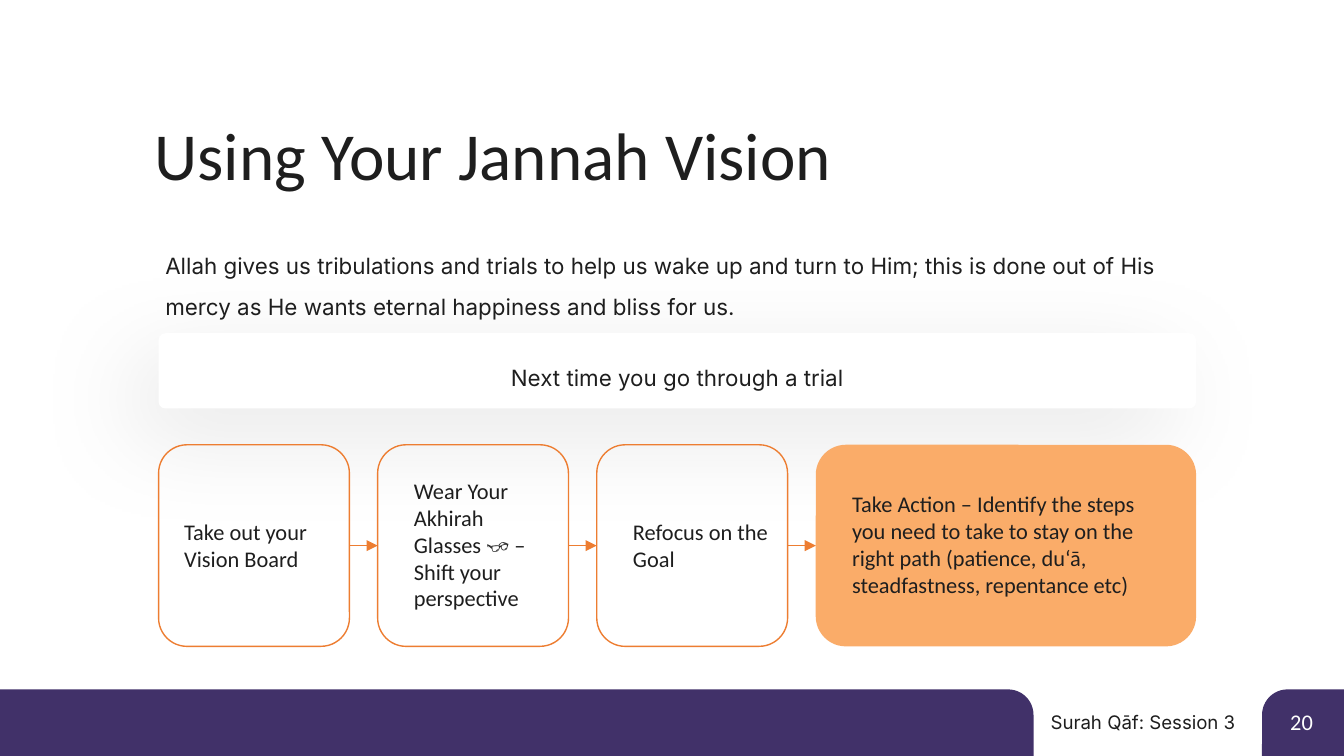
import dataclasses

import lxml.etree
import pptx
import pptx.dml.color
import pptx.enum.shapes
import pptx.enum.text
import pptx.oxml.ns
import pptx.util

Inches = pptx.util.Inches
Pt = pptx.util.Pt
RGBColor = pptx.dml.color.RGBColor
Shape = pptx.enum.shapes.MSO_SHAPE
Align = pptx.enum.text.PP_ALIGN
Anchor = pptx.enum.text.MSO_ANCHOR
AutoSize = pptx.enum.text.MSO_AUTO_SIZE
qn = pptx.oxml.ns.qn


@dataclasses.dataclass(frozen=True)
class Theme:
    ink: RGBColor = RGBColor.from_string("1E1E1E")
    white: RGBColor = RGBColor.from_string("FFFFFF")
    purple: RGBColor = RGBColor.from_string("413169")
    orange: RGBColor = RGBColor.from_string("ED7D31")
    peach: RGBColor = RGBColor.from_string("FAAC69")
    shadow: str = "000000"
    main_font: str = "Calibri"
    text_font: str = "Inter"
    title_size: int = 36
    body_size: int = 12
    footer_size: int = 10
    line_width: float = 0.75


theme = Theme()


def add_panel(kind, left, top, width, height, corner, fill=None, line=None):
    panel = page.shapes.add_shape(
        kind, Inches(left), Inches(top), Inches(width), Inches(height))
    panel.shadow.inherit = False
    panel.adjustments[0] = corner
    if fill is None:
        panel.fill.background()
    else:
        panel.fill.solid()
        panel.fill.fore_color.rgb = fill
    if line is None:
        panel.line.fill.background()
    else:
        panel.line.color.rgb = line
        panel.line.width = Pt(theme.line_width)
    return panel


def write(box, text, font=theme.main_font, size=theme.body_size, color=theme.ink,
          align=Align.LEFT, spacing=1.0, anchor=Anchor.TOP):
    frame = box.text_frame
    frame.word_wrap = True
    frame.auto_size = AutoSize.NONE
    frame.vertical_anchor = anchor
    frame.margin_left = frame.margin_right = Inches(0.05)
    frame.margin_top = frame.margin_bottom = Inches(0.02)
    para = frame.paragraphs[0]
    para.alignment = align
    para.line_spacing = spacing
    span = para.add_run()
    span.text = text
    span.font.name = font
    span.font.size = Pt(size)
    span.font.color.rgb = color


# Widescreen page, 16 by 9
deck = pptx.Presentation()
deck.slide_width = Inches(10)
deck.slide_height = Inches(10) * 9 // 16
page = deck.slides.add_slide(deck.slide_layouts[5])
page.background.fill.solid()
page.background.fill.fore_color.rgb = theme.white

# Footer: page number tab, session name and long bar
number_tab = add_panel(Shape.ROUND_1_RECTANGLE, 9.39, 5.13, 0.61, 0.5, 0.379, theme.purple)
number_tab._element.spPr.find(qn("a:xfrm")).set("flipH", "1")
add_panel(Shape.ROUND_1_RECTANGLE, 0, 5.13, 7.69, 0.5, 0.379, theme.purple)
session = page.shapes.add_textbox(Inches(7.43), Inches(5.27), Inches(1.81), Inches(0.22))
write(session, "Surah Qāf: Session 3", theme.text_font, theme.footer_size, align=Align.RIGHT)
number = page.shapes.add_textbox(Inches(9.55), Inches(5.25), Inches(0.3), Inches(0.25))
write(number, "20", color=theme.white)

# Title
title = page.shapes.title
title.left, title.top = Inches(1.1), Inches(0.82)
title.width, title.height = Inches(5.73), Inches(0.66)
write(title, "Using Your Jannah Vision", size=theme.title_size)

# Prompt card with a soft shadow
left, width = 1.18, 7.72
card = add_panel(Shape.ROUNDED_RECTANGLE, left, 2.48, width, 0.56, 0.091, theme.white)
write(card, "Next time you go through a trial", theme.text_font,
      align=Align.CENTER, spacing=1.5, anchor=Anchor.MIDDLE)
effects = card._element.spPr.find(qn("a:effectLst"))
shadow = lxml.etree.SubElement(
    effects, qn("a:outerShdw"), blurRad=str(Pt(55.9)), dist=str(Pt(20)),
    dir=str(135 * 60000), algn="ctr", rotWithShape="0")
shade = lxml.etree.SubElement(shadow, qn("a:srgbClr"), val=theme.shadow)
lxml.etree.SubElement(shade, qn("a:alpha"), val="9000")

# Introduction
intro = page.shapes.add_textbox(Inches(left), Inches(1.76), Inches(width), Inches(0.56))
write(intro, "Allah gives us tribulations and trials to help us wake up and turn to Him; "
      "this is done out of His mercy as He wants eternal happiness and bliss for us.",
      theme.text_font, spacing=1.5)

# Steps: text, panel width, text indent, text width, text height
steps = [
    ("Take out your Vision Board", 1.42, 0.14, 1.13, 0.45),
    ("Wear Your Akhirah Glasses 👓 – Shift your perspective", 1.42, 0.22, 1.13, 1.06),
    ("Refocus on the Goal", 1.42, 0.22, 1.13, 0.45),
    ("Take Action – Identify the steps you need to take to stay on the right path "
     "(patience, du‘ā, steadfastness, repentance etc)", 2.83, 0.22, 2.47, 0.86),
]
step_top, step_height, gap = 3.31, 1.5, 0.21
panels = []
for text, step_width, indent, text_width, text_height in steps:
    is_last = len(panels) == len(steps) - 1
    panels.append(add_panel(
        Shape.ROUNDED_RECTANGLE, left, step_top, step_width, step_height, 0.149,
        fill=theme.peach if is_last else None,
        line=None if is_last else theme.orange))
    text_top = step_top + (step_height - text_height) / 2
    label = page.shapes.add_textbox(
        Inches(left + indent), Inches(text_top), Inches(text_width), Inches(text_height))
    write(label, text)
    left += step_width + gap

# Arrows from the right side of each step to the left side of the next
for before, after in zip(panels, panels[1:]):
    arrow = page.shapes.add_connector(pptx.enum.shapes.MSO_CONNECTOR.STRAIGHT, 0, 0, 0, 0)
    arrow.begin_connect(before, 3)
    arrow.end_connect(after, 1)
    arrow.line.color.rgb = theme.orange
    arrow.line.width = Pt(theme.line_width)
    lxml.etree.SubElement(arrow.line._get_or_add_ln(), qn("a:tailEnd"), type="triangle")
    lxml.etree.SubElement(arrow._element.spPr, qn("a:effectLst"))

deck.save("out.pptx")
